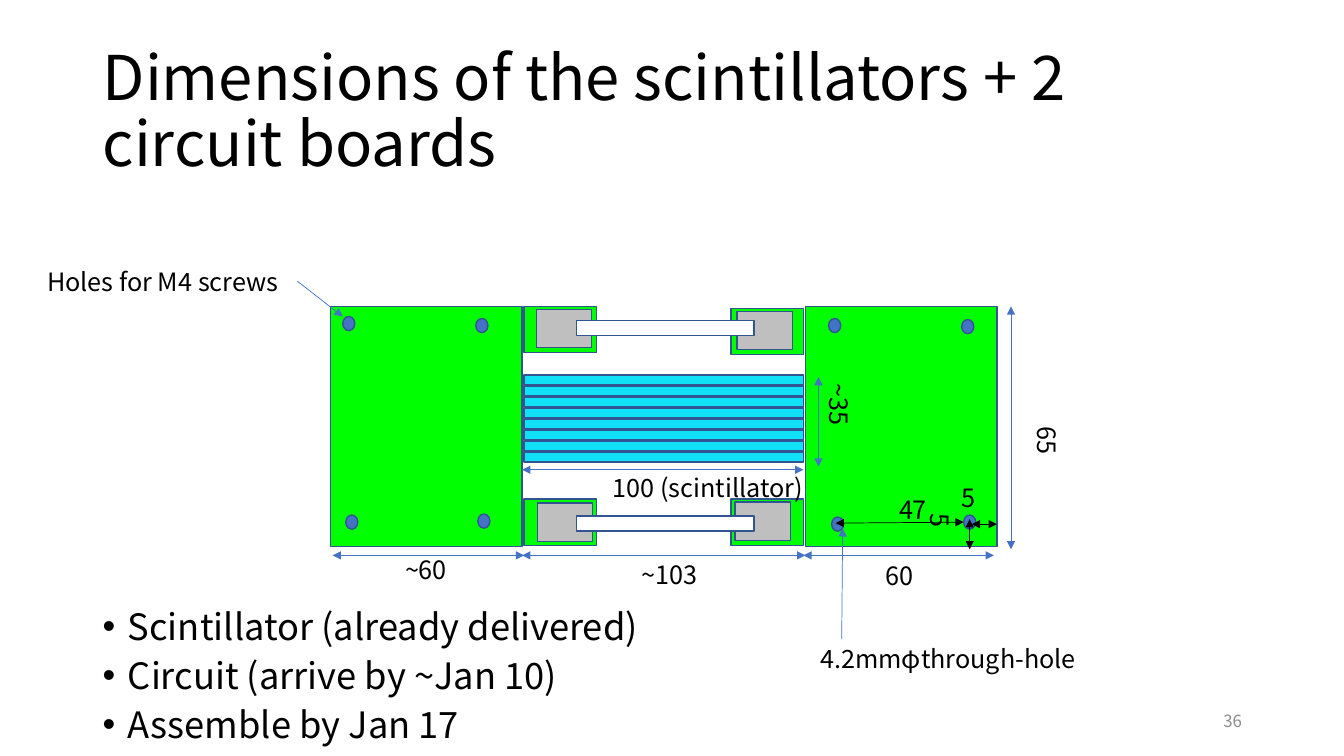
from typing import NamedTuple

from lxml import etree
from pptx import Presentation
from pptx.dml.color import RGBColor
from pptx.enum.shapes import MSO_CONNECTOR, MSO_SHAPE
from pptx.enum.text import MSO_ANCHOR, MSO_AUTO_SIZE, PP_ALIGN
from pptx.oxml.ns import qn
from pptx.util import Inches, Pt

RECT, OVAL, STRAIGHT = MSO_SHAPE.RECTANGLE, MSO_SHAPE.OVAL, MSO_CONNECTOR.STRAIGHT
TOP, MIDDLE = MSO_ANCHOR.TOP, MSO_ANCHOR.MIDDLE
LEFT, RIGHT = PP_ALIGN.LEFT, PP_ALIGN.RIGHT
FIXED, GROW, SHRINK = (MSO_AUTO_SIZE.NONE, MSO_AUTO_SIZE.SHAPE_TO_FIT_TEXT,
                       MSO_AUTO_SIZE.TEXT_TO_FIT_SHAPE)

FONT = "Noto Sans CJK JP"
BLACK, WHITE, GRAY, PALE = "000000", "FFFFFF", "8C8C8C", "BFBFBF"
GREEN, CYAN, BLUE, NAVY = "00FF00", "11E1F7", "4472C4", "325491"

# Grid: ten columns and ten rows to the inch
CELL = Inches(0.1)
COLS, ROWS = 133.33, 75


class Box(NamedTuple):
    col: float
    row: float
    cols: float
    rows: float


class Part(NamedTuple):
    fill: str
    cols: float
    rows: float
    corners: list[tuple[float, float]]
    kind: int = RECT


class Arrow(NamedTuple):
    start: tuple[float, float]
    end: tuple[float, float]
    color: str = BLUE
    double: bool = True


class Label(NamedTuple):
    text: str
    col: float
    row: float
    cols: float
    turn: int = 0


# Parts, from back to front
PARTS = [
    Part(GREEN, 19, 23.8, [(79.9, 30.4), (32.8, 30.4)]),
    Part(CYAN, 27.7, 1, [(52, 37.2 + 1.09 * i) for i in reversed(range(8))]),
    Part(GREEN, 7.2, 4.6, [(52, 30.4), (72.5, 30.6), (72.5, 49.5), (52, 49.5)]),
    Part(BLUE, 1.2, 1.4, [(34, 31.4), (34.3, 51.1), (47.4, 51), (47.2, 31.6),
                          (82.2, 31.6), (82.5, 51.3), (95.6, 51.1), (95.4, 31.7)], OVAL),
    Part(PALE, 5.5, 3.8, [(53.2, 30.7), (73.1, 30.9), (53.3, 49.9), (72.9, 49.8)]),
    Part(WHITE, 17.6, 1.5, [(57.2, 51.2), (57.2, 31.8)]),
]

ARROWS = [
    Arrow((79.7, 55.1), (98.6, 55.1)),
    Arrow((33, 55.1), (52, 55.1)),
    Arrow((51.8, 55.1), (79.9, 55.1)),
    Arrow((100.3, 30.4), (100.3, 54.5)),
    Arrow((51.8, 46.6), (79.7, 46.6)),
    Arrow((81.2, 37.4), (81.2, 46.3)),
    Arrow((29.5, 27.9), (34, 31.4), double=False),
    Arrow((83.5, 63.4), (83.6, 52.4), double=False),
    Arrow((96.4, 52), (98.9, 52), BLACK),
    Arrow((96.2, 51.5), (96.2, 54.5), BLACK),
    Arrow((82.9, 51.9), (95.6, 51.8), BLACK),
]

LABELS = [
    Label("~60", 39.2, 54.5, 6.6),
    Label("60", 86.9, 55.1, 4.8),
    Label("65", 101.5, 41.7, 4.8, 90),
    Label("100 (scintillator)", 59.8, 46.4, 21.1),
    Label("~35", 80, 38.4, 6.6, 90),
    Label("Holes for M4 screws", 3.7, 25.9, 25.9),
    Label("~103", 62.7, 55, 8),
    Label("5", 94.4, 47.4, 3.4),
    Label("5", 91.6, 49.7, 3.4, 90),
    Label("47", 88.2, 48.5, 4.8),
    Label("4.2mmφthrough-hole", 80.4, 63.3, 27.4),
]

PLANS = ["Scintillator (already delivered)", "Circuit (arrive by ~Jan 10)",
         "Assemble by Jan 17"]


def rgb(color: str) -> RGBColor:
    return RGBColor.from_string(color)


def grid(*cells: float) -> list[int]:
    return [round(n * CELL) for n in cells]


def assign(obj, values: dict) -> None:
    for name, value in values.items():
        setattr(obj, name, value)


def add_text(s, box: Box, lines: list[str], size: float, color: str = BLACK,
             frame: dict | None = None, para: dict | None = None):
    sp = s.shapes.add_textbox(*grid(*box))
    tf = sp.text_frame
    assign(tf, {"word_wrap": True, "auto_size": FIXED, "vertical_anchor": TOP} | (frame or {}))
    for i, line in enumerate(lines):
        p = tf.paragraphs[0] if i == 0 else tf.add_paragraph()
        assign(p, {"alignment": LEFT} | (para or {}))
        r = p.add_run()
        r.text = line
        assign(r.font, {"size": Pt(size), "name": FONT})
        r.font.color.rgb = rgb(color)
        etree.SubElement(r.font._element, qn("a:ea"), typeface=FONT)
    return sp


def add_bullets(sp) -> None:
    for p in sp.text_frame.paragraphs:
        pPr = p._p.get_or_add_pPr()
        pPr.set("marL", str(Inches(0.25)))
        pPr.set("indent", str(-Inches(0.25)))
        etree.SubElement(pPr, qn("a:buFont"), typeface="Arial")
        etree.SubElement(pPr, qn("a:buChar"), char="•")


def add_part(s, part: Part) -> None:
    for corner in part.corners:
        sp = s.shapes.add_shape(part.kind, *grid(*corner, part.cols, part.rows))
        sp.shadow.inherit = False
        sp.fill.solid()
        sp.fill.fore_color.rgb = rgb(part.fill)
        sp.line.color.rgb = rgb(NAVY)
        sp.line.width = Pt(1)


def add_arrow(s, arrow: Arrow) -> None:
    line = s.shapes.add_connector(STRAIGHT, *grid(*arrow.start, *arrow.end))
    line.line.color.rgb = rgb(arrow.color)
    line.line.width = Pt(0.5)
    ln = line.line._get_or_add_ln()
    for end in ("a:headEnd", "a:tailEnd") if arrow.double else ("a:tailEnd",):
        etree.SubElement(ln, qn(end), type="triangle")
    etree.SubElement(line._element.spPr, qn("a:effectLst"))


def add_label(s, label: Label) -> None:
    box = Box(label.col, label.row, label.cols, 4)
    sp = add_text(s, box, [label.text], 18, frame={"word_wrap": False, "auto_size": GROW})
    sp.rotation = label.turn


def main() -> None:
    prs = Presentation()
    prs.slide_width, prs.slide_height = grid(COLS, ROWS)
    s = prs.slides.add_slide(prs.slide_layouts[6])

    # Title, plans and slide number
    add_text(s, Box(9.2, 4, 115, 14.5), ["Dimensions of the scintillators + 2 circuit boards"], 44,
             frame={"auto_size": SHRINK, "vertical_anchor": MIDDLE}, para={"line_spacing": 0.9})
    plans = add_text(s, Box(9.2, 60.3, 118.1, 14.7), PLANS, 25.9,
                     para={"line_spacing": 0.8, "space_before": Pt(10)})
    add_bullets(plans)
    add_text(s, Box(94.2, 69.5, 30, 4), ["36"], 12, GRAY,
             frame={"vertical_anchor": MIDDLE}, para={"alignment": RIGHT})

    # Drawing with its dimensions
    for part in PARTS:
        add_part(s, part)
    for arrow in ARROWS:
        add_arrow(s, arrow)
    for label in LABELS:
        add_label(s, label)

    prs.save("out.pptx")


if __name__ == "__main__":
    main()
